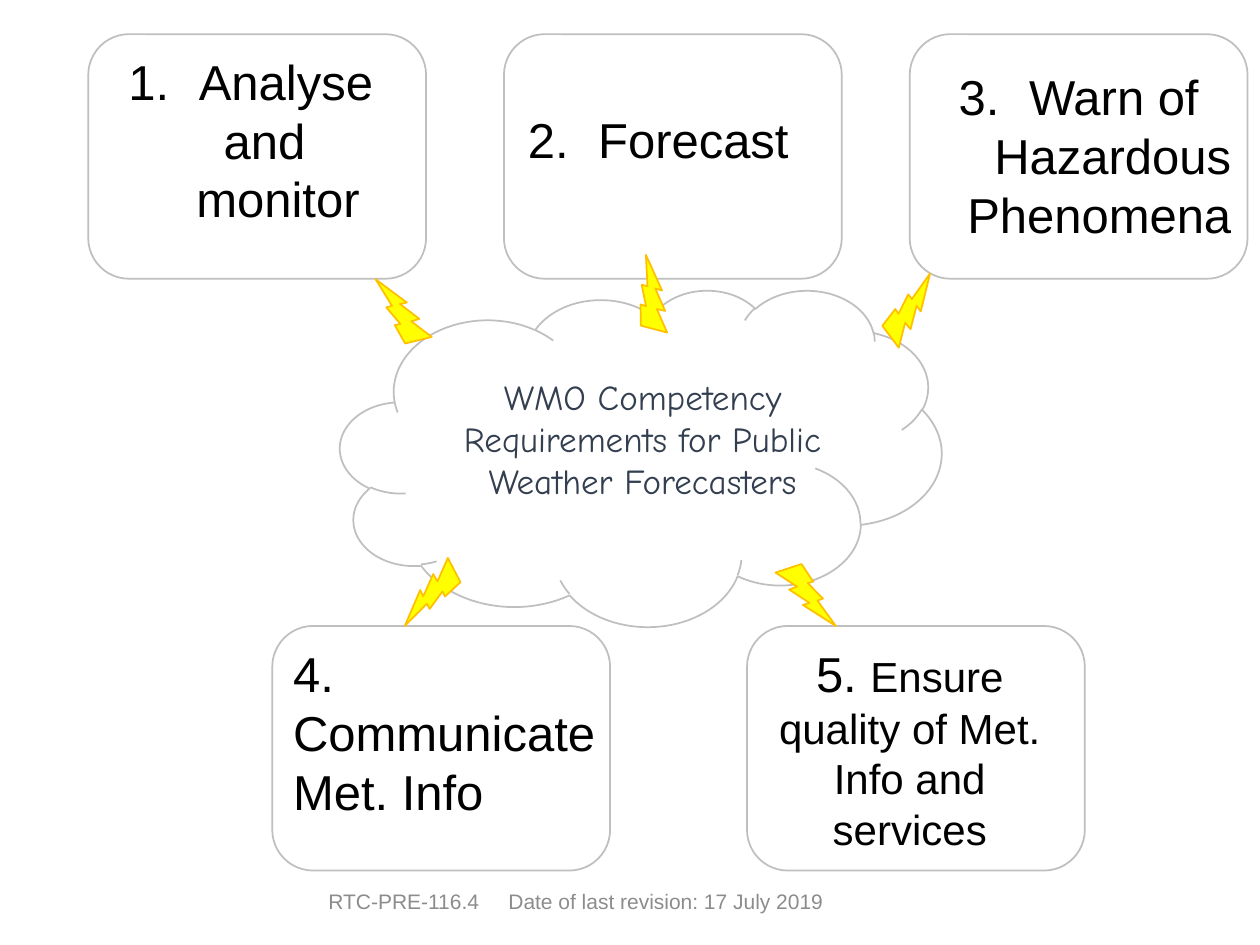
"""Build a slide of five forecaster competencies around a central cloud."""
import pptx
import pptx.dml.color
import pptx.enum.shapes
import pptx.enum.text
import pptx.oxml.ns
import pptx.util
from lxml import etree

Cm = pptx.util.Cm
Pt = pptx.util.Pt
MSO_SHAPE = pptx.enum.shapes.MSO_SHAPE
PP_ALIGN = pptx.enum.text.PP_ALIGN
MSO_ANCHOR = pptx.enum.text.MSO_ANCHOR

COLORS = {
    "white": "FFFFFF",
    "outline": "BFBFBF",
    "bolt": "FFFF00",
    "bolt_line": "FFC000",
    "text": "000000",
    "title": "333F50",
    "footer": "8C8C8C",
}
BOX_W, BOX_H = 6.81, 4.93
TOP_ROW, BOTTOM_ROW = 0.69, 12.62
BOXES = [(1.78, TOP_ROW), (10.16, TOP_ROW), (18.34, TOP_ROW),
         (5.49, BOTTOM_ROW), (15.06, BOTTOM_ROW)]
BOLT_W, BOLT_H = 1.3, 1.19
BOLTS = [(7.47, 5.72, 188.9), (12.52, 5.41, 217.8), (17.68, 5.69, 256),
         (15.6, 11.38, 4.6), (8.05, 11.33, 85.4)]
NUMBER_INDENT = 1.42


def rgb(name):
    return pptx.dml.color.RGBColor.from_string(COLORS[name])


def add_figure(slide, kind, x, y, w, h, fill="white", line="outline", rotation=0):
    sp = slide.shapes.add_shape(kind, Cm(x), Cm(y), Cm(w), Cm(h))
    sp.shadow.inherit = False
    sp.fill.solid()
    sp.fill.fore_color.rgb = rgb(fill)
    sp.line.color.rgb = rgb(line)
    sp.line.width = Pt(1)
    sp.rotation = rotation
    return sp


def format_run(r, size, color="text", font="Arial"):
    r.font.size = Pt(size)
    r.font.name = font
    r.font.color.rgb = rgb(color)


def add_text(slide, x, y, w, h, text, size=28, align=PP_ALIGN.LEFT,
             color="text", font="Arial"):
    tf = slide.shapes.add_textbox(Cm(x), Cm(y), Cm(w), Cm(h)).text_frame
    tf.word_wrap = True
    tf.text = text
    for p in tf.paragraphs:
        p.alignment = align
        for r in p.runs:
            format_run(r, size, color, font)
    return tf


def set_indent(p, left, first=0):
    pPr = p._p.get_or_add_pPr()
    pPr.set("marL", str(Cm(left)))
    pPr.set("indent", str(Cm(first)))
    return pPr


def add_number(p, start):
    pPr = set_indent(p, NUMBER_INDENT, -NUMBER_INDENT)
    etree.SubElement(pPr, pptx.oxml.ns.qn("a:buAutoNum"),
                     type="arabicPeriod", startAt=str(start))


def add_numbered(slide, x, y, w, h, start, text, indents=(), align=PP_ALIGN.LEFT):
    tf = add_text(slide, x, y, w, h, text, align=align)
    add_number(tf.paragraphs[0], start)
    for p, left in zip(tf.paragraphs[1:], indents):
        set_indent(p, left)


def add_footer(slide):
    tf = add_text(slide, 5.49, 17.65, 12.22, 1.02,
                  "RTC-PRE-116.4\tDate of last revision: 17 July 2019",
                  size=12, color="footer")
    tf.vertical_anchor = MSO_ANCHOR.MIDDLE
    tf.margin_left = Cm(1.13)
    pPr = tf.paragraphs[0]._p.get_or_add_pPr()
    tabs = etree.SubElement(pPr, pptx.oxml.ns.qn("a:tabLst"))
    etree.SubElement(tabs, pptx.oxml.ns.qn("a:tab"), pos=str(Cm(3.63)), algn="l")


def add_competencies(slide):
    center = PP_ALIGN.CENTER
    add_numbered(slide, 2.34, 0.91, 5.72, 3.84, 1, "Analyse\nand\nmonitor", (1.92, 1.37))
    add_numbered(slide, 10.39, 2.08, 6.15, 1.45, 2, "Forecast")
    add_numbered(slide, 18.34, 1.22, 6.81, 3.84, 3, "Warn of\nHazardous\nPhenomena",
                 (1.37, 0.83), center)
    add_text(slide, 5.66, 12.85, 6.6, 3.84, "4. Communicate Met. Info")
    tf = add_text(slide, 15.04, 12.85, 6.6, 4.52, "5. ", align=center)
    r = tf.paragraphs[0].add_run()
    r.text = "Ensure quality of Met. Info and services"
    format_run(r, 24)


def main():
    prs = pptx.Presentation()
    prs.slide_width, prs.slide_height = Cm(25.4), Cm(19.05)
    slide = prs.slides.add_slide(prs.slide_layouts[6])
    add_footer(slide)
    add_figure(slide, MSO_SHAPE.CLOUD, 6.86, 5.84, 12.12, 6.78)
    add_text(slide, 8.79, 7.44, 8.33, 3.68,
             "WMO Competency Requirements for Public Weather Forecasters",
             size=20, align=PP_ALIGN.CENTER, color="title", font="Comic Neue")
    for x, y in BOXES:
        add_figure(slide, MSO_SHAPE.ROUNDED_RECTANGLE, x, y, BOX_W, BOX_H)
    add_competencies(slide)
    for x, y, rotation in BOLTS:
        add_figure(slide, MSO_SHAPE.LIGHTNING_BOLT, x, y, BOLT_W, BOLT_H,
                   "bolt", "bolt_line", rotation)
    prs.save("out.pptx")


if __name__ == "__main__":
    main()
